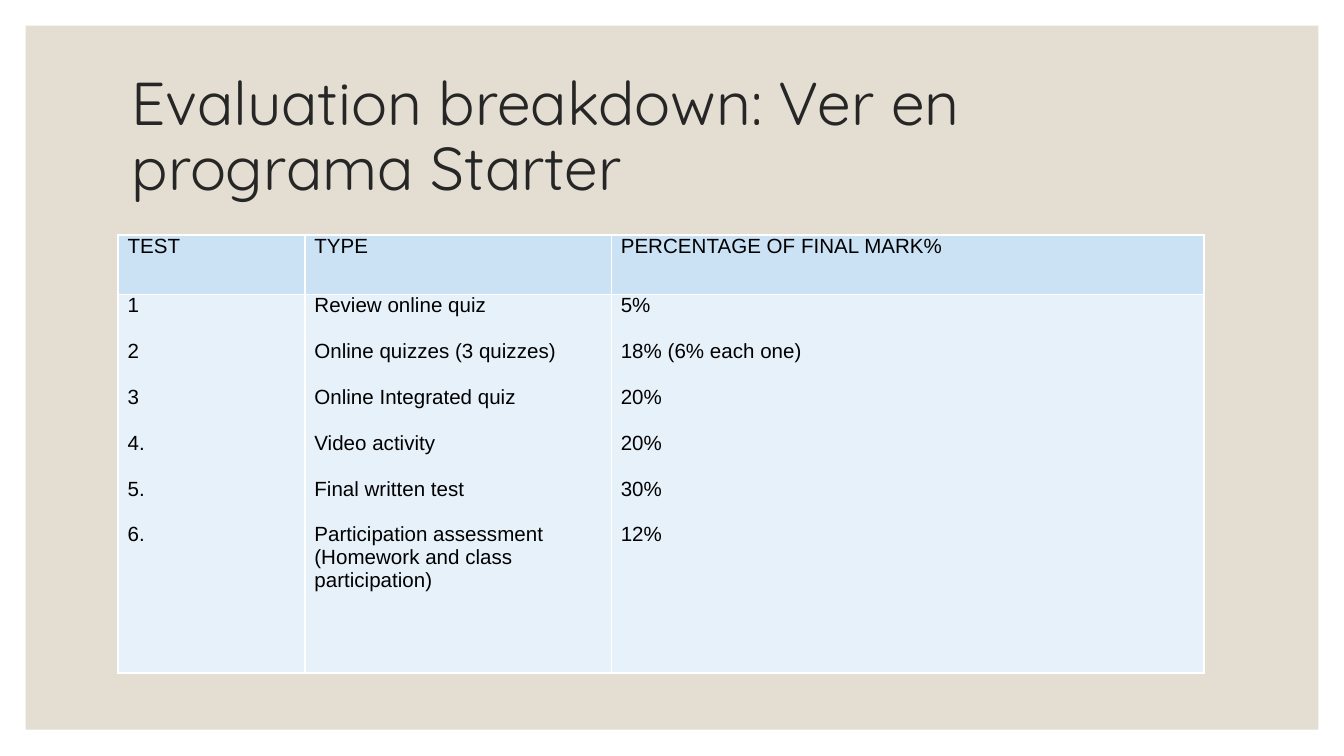
from lxml.etree import SubElement
from pptx import Presentation
from pptx.dml.color import RGBColor
from pptx.enum.shapes import MSO_SHAPE
from pptx.enum.text import MSO_ANCHOR, MSO_AUTO_SIZE, PP_ALIGN
from pptx.oxml.ns import qn
from pptx.util import Inches, Pt

SAND = RGBColor(0xE3, 0xDE, 0xD1)
INK = RGBColor(0x26, 0x26, 0x26)
BLACK = RGBColor(0, 0, 0)
WHITE = RGBColor(0xFF, 0xFF, 0xFF)
HEADER_BLUE = RGBColor(0xCB, 0xE2, 0xF5)
BODY_BLUE = RGBColor(0xE7, 0xF1, 0xFA)

HEADER = ("TEST", "TYPE", "PERCENTAGE OF FINAL MARK%")
TESTS = [
    ("1", "Review online quiz", "5%"),
    ("2", "Online quizzes (3 quizzes)", "18% (6% each one)"),
    ("3", "Online Integrated quiz", "20%"),
    ("4.", "Video activity", "20%"),
    ("5.", "Final written test", "30%"),
    ("6.", "Participation assessment (Homework and class participation)", "12%"),
]
COLUMN_WIDTHS = (1.39, 2.28, 4.41)
ROW_HEIGHTS = (0.44, 2.82)


def add_panel(s):
    """Add the sand panel behind everything else."""
    sp = s.shapes.add_shape(MSO_SHAPE.RECTANGLE, Inches(0.19), Inches(0.19),
                            Inches(9.62), Inches(5.24))
    sp.shadow.inherit = False
    sp.fill.solid()
    sp.fill.fore_color.rgb = SAND
    sp.line.fill.background()
    s.shapes.element.insert(2, sp.element)


def set_title(s, text):
    """Place and format the title placeholder."""
    sp = s.shapes.title
    sp.left, sp.top, sp.width, sp.height = map(Inches, (0.88, 0.53, 8.25, 1))
    tf = sp.text_frame
    tf.text = text
    tf.word_wrap = True
    tf.auto_size = MSO_AUTO_SIZE.NONE
    tf.vertical_anchor = MSO_ANCHOR.MIDDLE
    p = tf.paragraphs[0]
    p.alignment = PP_ALIGN.LEFT
    p.line_spacing = 0.9
    p.font.name = "Quicksand"
    p.font.size = Pt(32.4)
    p.font.color.rgb = INK


def set_borders(cell, color, width):
    """Draw the four borders of a cell."""
    tc_pr = cell._tc.get_or_add_tcPr()
    for i, side in enumerate(("lnL", "lnR", "lnT", "lnB")):
        ln = SubElement(tc_pr, qn(f"a:{side}"), w=str(Pt(width)))
        fill = SubElement(ln, qn("a:solidFill"))
        SubElement(fill, qn("a:srgbClr"), val=str(color))
        tc_pr.insert(i, ln)


def fill_cell(cell, lines, color):
    """Write one paragraph per line, spaced a line apart."""
    cell.margin_left = cell.margin_right = Inches(0.07)
    cell.margin_top = cell.margin_bottom = 0
    cell.fill.solid()
    cell.fill.fore_color.rgb = color
    set_borders(cell, WHITE, 1)
    tf = cell.text_frame
    tf.text = "\n".join(lines)
    for i, p in enumerate(tf.paragraphs):
        p.space_before = Pt(12.3 if i else 0)
        p.font.name = "Arial"
        p.font.size = Pt(11)
        p.font.bold = False
        p.font.color.rgb = BLACK


def add_marks_table(s):
    """Add the table with a header row and one row listing all tests."""
    table = s.shapes.add_table(2, 3, Inches(0.88), Inches(1.75),
                               Inches(sum(COLUMN_WIDTHS)),
                               Inches(sum(ROW_HEIGHTS))).table
    for row, height in zip(table.rows, ROW_HEIGHTS):
        row.height = Inches(height)
    for i, lines in enumerate(zip(*TESTS)):
        table.columns[i].width = Inches(COLUMN_WIDTHS[i])
        fill_cell(table.cell(0, i), [HEADER[i]], HEADER_BLUE)
        fill_cell(table.cell(1, i), lines, BODY_BLUE)


def main():
    """Build the slide and save it."""
    prs = Presentation()
    prs.slide_width, prs.slide_height = Inches(10), Inches(5.625)
    s = prs.slides.add_slide(prs.slide_layouts[5])
    add_panel(s)
    set_title(s, "Evaluation breakdown: Ver en programa Starter")
    add_marks_table(s)
    prs.save("out.pptx")


if __name__ == "__main__":
    main()
